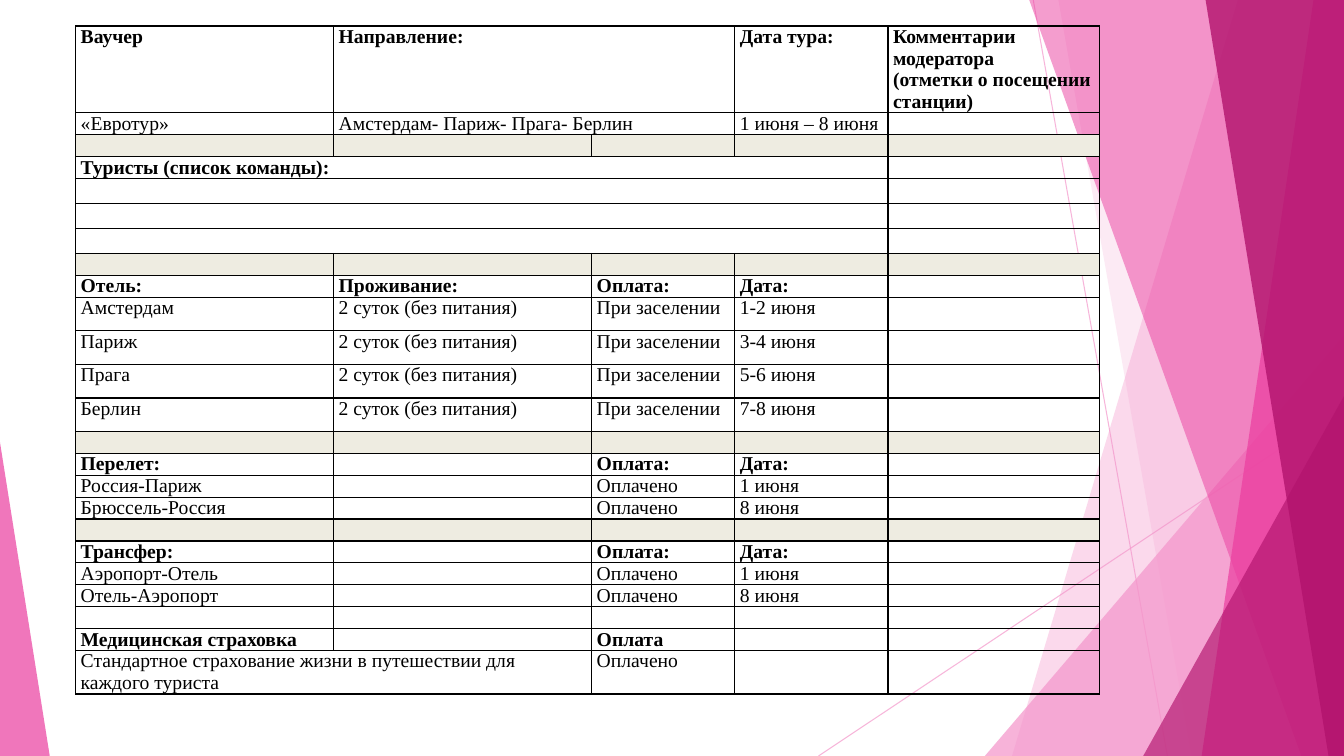
import typing

import lxml.etree
import pptx
import pptx.dml.color
import pptx.enum.shapes
import pptx.oxml.ns
import pptx.util

RGBColor = pptx.dml.color.RGBColor
BLACK = RGBColor(0x00, 0x00, 0x00)
SAND = RGBColor(0xEE, 0xEC, 0xE1)
LIGHT_PINK = RGBColor(0xF4, 0x96, 0xCB)
PINK = RGBColor(0xEB, 0x3D, 0x9F)
CRIMSON = RGBColor(0xB2, 0x13, 0x6D)

SLIDE_WIDTH = pptx.util.Inches(13.33)
SLIDE_HEIGHT = pptx.util.Inches(7.5)
FONT_FORMAT = {"name": "Times New Roman", "size": pptx.util.Pt(14)}
CELL_FORMAT = {
    "margin_left": pptx.util.Inches(0.05), "margin_right": pptx.util.Inches(0.05),
    "margin_top": 0, "margin_bottom": 0,
}
NUMBER_INDENT = pptx.util.Inches(0.38)

# Every length below is a percentage of the slide's width or height.
TABLE_LEFT, TABLE_TOP = 5.63, 3.45
COLUMN_WIDTHS = (19.2, 19.2, 10.65, 11.4, 15.75)
LINE_ROW, NUMBER_ROW, HOTEL_ROW, HEADER_ROW, LAST_ROW = 2.9, 3.31, 4.44, 11.4, 5.75


class Ray(typing.NamedTuple):
    start: tuple[float, float]
    end: tuple[float, float]


class Band(typing.NamedTuple):
    """Area from a slanted edge, top to bottom, to the slide's right side."""
    top_x: float
    bottom_x: float
    color: RGBColor
    opacity: int


class Corner(typing.NamedTuple):
    """Right triangle standing on the slide's bottom edge."""
    left: float
    top: float
    width: float
    apex: int
    color: RGBColor
    opacity: int


class Row(typing.NamedTuple):
    texts: tuple[str, ...] = ()
    bold: bool = False
    height: float = LINE_ROW
    merge: tuple[int, int] | None = None
    shaded: bool = False
    numbered: bool = False


DECORATION = (
    Ray((76.88, 0), (86.86, 100)),
    Ray((100, 53.73), (60.9, 100)),
    Band(92.1, 75.3, LIGHT_PINK, 36),
    Band(78.75, 88.65, LIGHT_PINK, 20),
    Corner(73.28, 44.4, 26.72, 1, LIGHT_PINK, 72),
    Band(76.58, 96.83, PINK, 50),
    Band(97.73, 89.41, PINK, 70),
    Band(89.7, 98.85, CRIMSON, 80),
    Corner(85.06, 52.4, 14.94, 1, CRIMSON, 66),
    Corner(0, 58.53, 3.7, 0, PINK, 70),
)

SEPARATOR = Row(shaded=True)
TOURIST = Row(height=NUMBER_ROW, merge=(0, 3), numbered=True)
HOTELS = (("Амстердам", "1-2 июня"), ("Париж", "3-4 июня"),
          ("Прага", "5-6 июня"), ("Берлин", "7-8 июня"))


def payment_rows(heading: str, outbound: str, inbound: str) -> list[Row]:
    return [
        Row((heading, "", "Оплата:", "Дата:"), bold=True),
        Row((outbound, "", "Оплачено", "1 июня")),
        Row((inbound, "", "Оплачено", "8 июня")),
    ]


ROWS = [
    Row(("Ваучер", "Направление:", "", "Дата тура:",
         "Комментарии модератора\n(отметки о посещении станции)"),
        bold=True, height=HEADER_ROW, merge=(1, 2)),
    Row(("«Евротур»", "Амстердам- Париж- Прага- Берлин", "", "1 июня – 8 июня"), merge=(1, 2)),
    SEPARATOR,
    Row(("Туристы (список команды):",), bold=True, merge=(0, 3)),
    *[TOURIST] * 3,
    SEPARATOR,
    Row(("Отель:", "Проживание:", "Оплата:", "Дата:"), bold=True),
    *[Row((city, "2 суток (без питания)", "При заселении", dates), height=HOTEL_ROW)
      for city, dates in HOTELS],
    SEPARATOR,
    *payment_rows("Перелет:", "Россия-Париж", "Брюссель-Россия"),
    SEPARATOR,
    *payment_rows("Трансфер:", "Аэропорт-Отель", "Отель-Аэропорт"),
    Row(),
    Row(("Медицинская страховка", "", "Оплата"), bold=True),
    Row(("Стандартное страхование жизни в путешествии для каждого туриста", "", "Оплачено"),
        height=LAST_ROW, merge=(0, 1)),
]


def across(percent: float) -> int:
    return round(SLIDE_WIDTH * percent / 100)


def down(percent: float) -> int:
    return round(SLIDE_HEIGHT * percent / 100)


def add_xml(parent, tag: str, **attributes: str):
    return lxml.etree.SubElement(parent, pptx.oxml.ns.qn(tag), attributes)


def set_opacity(shape, percent: int) -> None:
    for color in shape._element.spPr.iter(pptx.oxml.ns.qn("a:srgbClr")):
        add_xml(color, "a:alpha", val=str(percent * 1000))


def draw_ray(page, ray: Ray) -> None:
    line = page.shapes.add_connector(
        pptx.enum.shapes.MSO_CONNECTOR.STRAIGHT,
        across(ray.start[0]), down(ray.start[1]), across(ray.end[0]), down(ray.end[1]))
    line.line.color.rgb = LIGHT_PINK
    line.line.width = pptx.util.Pt(0.75)
    set_opacity(line, 70)
    add_xml(line._element.spPr, "a:effectLst")


def draw_area(page, area: Band | Corner) -> None:
    if isinstance(area, Band):
        builder = page.shapes.build_freeform(across(area.top_x), 0)
        builder.add_line_segments([(SLIDE_WIDTH, 0), (SLIDE_WIDTH, SLIDE_HEIGHT),
                                   (across(area.bottom_x), SLIDE_HEIGHT)])
        shape = builder.convert_to_shape()
    else:
        shape = page.shapes.add_shape(
            pptx.enum.shapes.MSO_SHAPE.ISOSCELES_TRIANGLE,
            across(area.left), down(area.top), across(area.width), down(100 - area.top))
        shape.adjustments[0] = area.apex
    shape.shadow.inherit = False
    shape.fill.solid()
    shape.fill.fore_color.rgb = area.color
    set_opacity(shape, area.opacity)
    shape.line.fill.background()


def add_borders(cell) -> None:
    properties = cell._tc.get_or_add_tcPr()
    for side in ("a:lnL", "a:lnR", "a:lnT", "a:lnB"):
        border = add_xml(properties, side, w=str(pptx.util.Pt(1)))
        add_xml(add_xml(border, "a:solidFill"), "a:srgbClr", val=str(BLACK))


def fill_cell(cell, text: str, row: Row) -> None:
    for name, value in CELL_FORMAT.items():
        setattr(cell, name, value)
    add_borders(cell)
    if row.shaded:
        cell.fill.solid()
        cell.fill.fore_color.rgb = SAND
    else:
        cell.fill.background()
    cell.text = text
    for para in cell.text_frame.paragraphs:
        for span in para.runs:
            for name, value in FONT_FORMAT.items():
                setattr(span.font, name, value)
            span.font.bold = row.bold
            span.font.color.rgb = BLACK
        if not para.runs:
            ending = add_xml(para._p, "a:endParaRPr", sz="1400")
            add_xml(add_xml(ending, "a:solidFill"), "a:srgbClr", val=str(BLACK))
            add_xml(ending, "a:latin", typeface=FONT_FORMAT["name"])


def number_cell(cell) -> None:
    properties = cell.text_frame.paragraphs[0]._p.get_or_add_pPr()
    properties.set("marL", str(NUMBER_INDENT))
    properties.set("indent", str(-NUMBER_INDENT))
    add_xml(properties, "a:buFont", typeface="+mj-lt")
    add_xml(properties, "a:buAutoNum", type="arabicPeriod")


def draw_voucher(page) -> None:
    table = page.shapes.add_table(
        len(ROWS), len(COLUMN_WIDTHS), across(TABLE_LEFT), down(TABLE_TOP),
        across(sum(COLUMN_WIDTHS)), down(sum(row.height for row in ROWS))).table
    table.first_row = table.horz_banding = False
    for column, width in zip(table.columns, COLUMN_WIDTHS):
        column.width = across(width)
    for index, row in enumerate(ROWS):
        table.rows[index].height = down(row.height)
        for position in range(len(COLUMN_WIDTHS)):
            text = row.texts[position] if position < len(row.texts) else ""
            fill_cell(table.cell(index, position), text, row)
        if row.numbered:
            number_cell(table.cell(index, 0))
        if row.merge:
            first, last = row.merge
            table.cell(index, first).merge(table.cell(index, last))


def main() -> None:
    deck = pptx.Presentation()
    deck.slide_width, deck.slide_height = SLIDE_WIDTH, SLIDE_HEIGHT
    page = deck.slides.add_slide(deck.slide_layouts[6])
    for element in DECORATION:
        if isinstance(element, Ray):
            draw_ray(page, element)
        else:
            draw_area(page, element)
    draw_voucher(page)
    deck.save("out.pptx")


if __name__ == "__main__":
    main()
